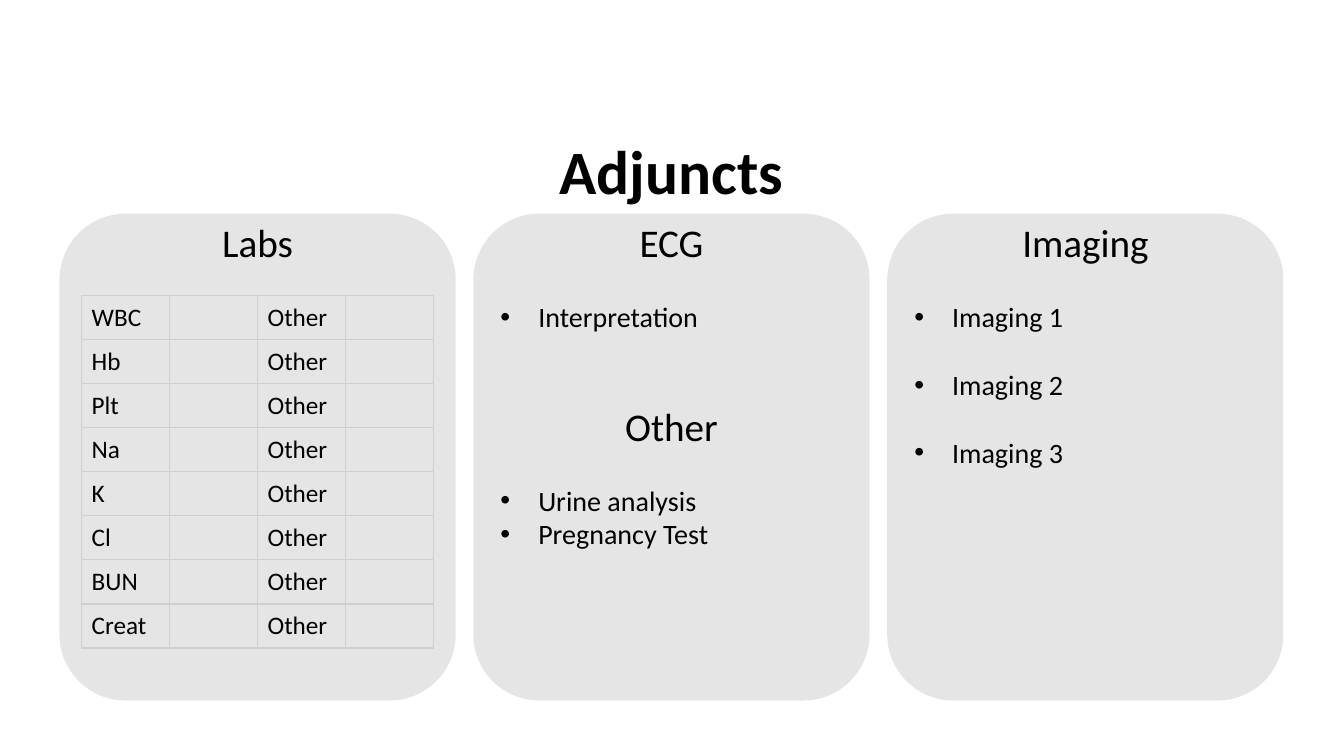
from lxml.etree import SubElement
from pptx import Presentation
from pptx.dml.color import RGBColor
from pptx.enum.shapes import MSO_SHAPE
from pptx.enum.text import MSO_ANCHOR, MSO_AUTO_SIZE, PP_ALIGN
from pptx.oxml import parse_xml
from pptx.oxml.ns import nsdecls, qn
from pptx.util import Inches, Pt

BLACK = RGBColor(0, 0, 0)
BORDER = RGBColor(0xD0, 0xCE, 0xCE)
FONT = "Calibri"

# Panel grid, in inches
PANEL_LEFT, PANEL_TOP = 0.59, 2.12
PANEL_WIDTH, PANEL_HEIGHT = 3.93, 4.83
PANEL_PITCH = 4.105
TEXT_INSET = 0.17
LINE_POINTS = 24.4  # height of one 20-point line

# Each entry: kind, text, number of lines left free above it
PANELS = [
    [("heading", "Labs", 0)],
    [("heading", "ECG", 0), ("bullet", "Interpretation", 1),
     ("heading", "Other", 2), ("bullet", "Urine analysis", 1),
     ("bullet", "Pregnancy Test", 0)],
    [("heading", "Imaging", 0), ("bullet", "Imaging 1", 1),
     ("bullet", "Imaging 2", 1), ("bullet", "Imaging 3", 1)],
]
LABS = ["WBC", "Hb", "Plt", "Na", "K", "Cl", "BUN", "Creat"]


def style_font(paragraph, size, bold=False):
    font = paragraph.font
    font.name, font.size, font.bold = FONT, Pt(size), bold
    font.color.rgb = BLACK


def add_title(slide, text):
    title = slide.shapes.title
    title.left, title.top = Inches(0.91), Inches(1.34)
    title.width, title.height = Inches(11.5), Inches(0.78)
    frame = title.text_frame
    frame.text = text
    frame.auto_size = MSO_AUTO_SIZE.NONE
    frame.vertical_anchor = MSO_ANCHOR.MIDDLE
    paragraph = frame.paragraphs[0]
    paragraph.alignment = PP_ALIGN.CENTER
    paragraph.line_spacing = 0.9
    style_font(paragraph, 44, bold=True)


def add_bullet(paragraph):
    properties = paragraph._p.get_or_add_pPr()
    properties.set("marL", str(Inches(0.375)))
    properties.set("indent", str(-Inches(0.375)))
    SubElement(properties, qn("a:buFont"), typeface="Arial")
    SubElement(properties, qn("a:buChar"), char="•")


def add_panel(slide, left, top, width, height, entries):
    # Translucent rounded background
    panel = slide.shapes.add_shape(MSO_SHAPE.ROUNDED_RECTANGLE, Inches(left),
                                   Inches(top), Inches(width), Inches(height))
    panel.shadow.inherit = False
    panel.fill.solid()
    panel.fill.fore_color.rgb = BLACK
    color = panel._element.spPr.find(qn("a:solidFill"))[0]
    SubElement(color, qn("a:alpha"), val="10000")
    panel.line.fill.background()

    # Headings and bulleted items
    box = slide.shapes.add_textbox(
        Inches(left + TEXT_INSET), Inches(top),
        Inches(width - 2 * TEXT_INSET), Inches(height))
    frame = box.text_frame
    frame.word_wrap = True
    for index, (kind, text, free_lines) in enumerate(entries):
        paragraph = frame.add_paragraph() if index else frame.paragraphs[0]
        paragraph.text = text
        if free_lines:
            paragraph.space_before = Pt(free_lines * LINE_POINTS)
        if kind == "heading":
            paragraph.alignment = PP_ALIGN.CENTER
            style_font(paragraph, 28)
        else:
            add_bullet(paragraph)
            style_font(paragraph, 20)


def set_borders(cell):
    properties = cell._tc.get_or_add_tcPr()
    for index, side in enumerate(("lnL", "lnR", "lnT", "lnB")):
        properties.insert(index, parse_xml(
            f'<a:{side} {nsdecls("a")} w="{Pt(1)}"><a:solidFill>'
            f'<a:srgbClr val="{BORDER}"/></a:solidFill></a:{side}>'))


def add_labs_table(slide, left, top, width, height):
    table = slide.shapes.add_table(len(LABS), 4, Inches(left), Inches(top),
                                   Inches(width), Inches(height)).table
    table.first_row = table.horz_banding = False
    for row, lab in enumerate(LABS):
        for column, text in enumerate((lab, "", "Other", "")):
            cell = table.cell(row, column)
            cell.text = text
            cell.vertical_anchor = MSO_ANCHOR.MIDDLE
            cell.fill.background()
            set_borders(cell)
            style_font(cell.text_frame.paragraphs[0], 18)


def main():
    presentation = Presentation()
    presentation.slide_width = Inches(13.33)
    presentation.slide_height = Inches(7.5)
    slide = presentation.slides.add_slide(presentation.slide_layouts[5])
    add_title(slide, "Adjuncts")
    for index, entries in enumerate(PANELS):
        add_panel(slide, PANEL_LEFT + index * PANEL_PITCH, PANEL_TOP,
                  PANEL_WIDTH, PANEL_HEIGHT, entries)
    add_labs_table(slide, PANEL_LEFT + 0.22, PANEL_TOP + 0.81,
                   PANEL_WIDTH - 0.44, 3.5)
    presentation.save("out.pptx")


if __name__ == "__main__":
    main()
